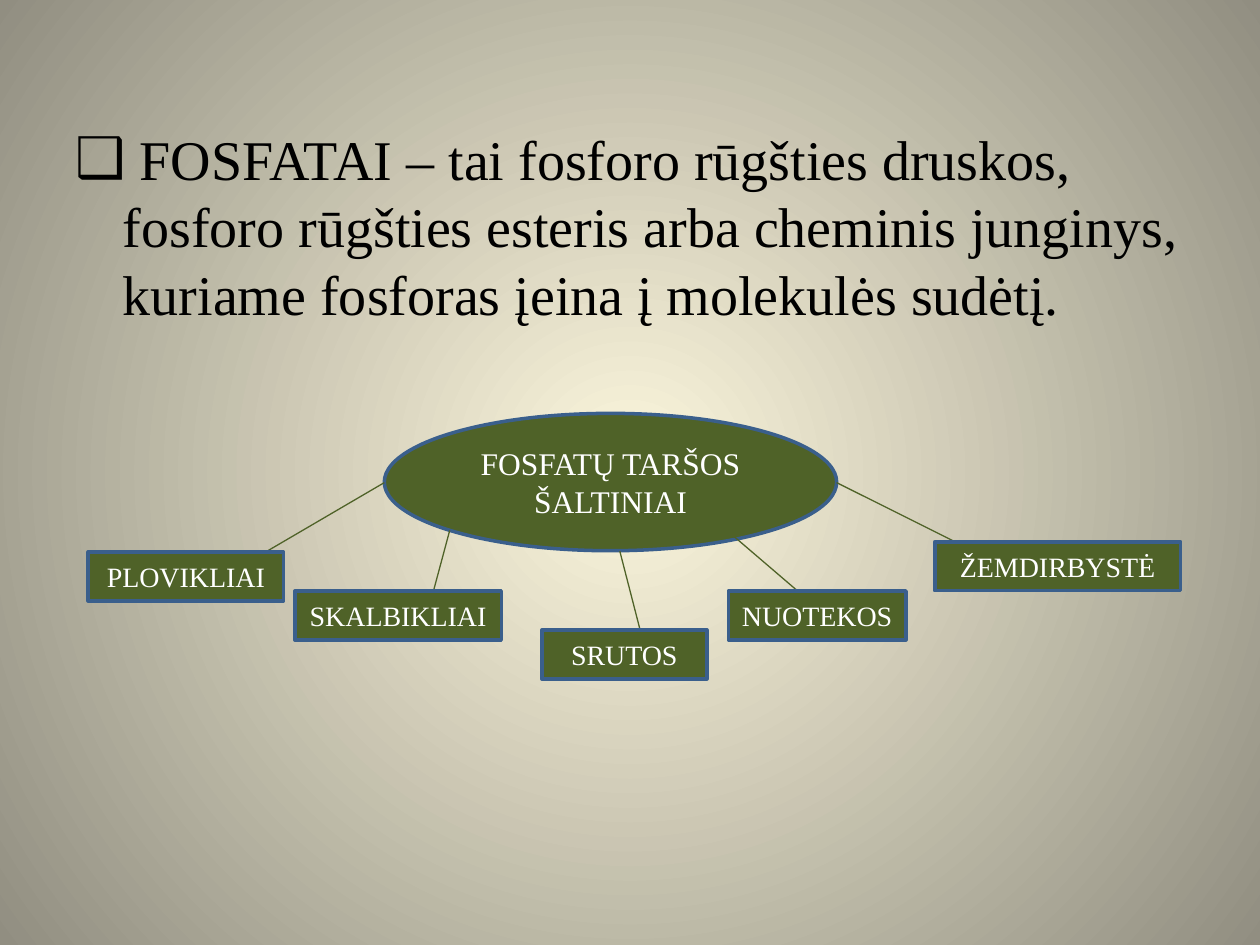
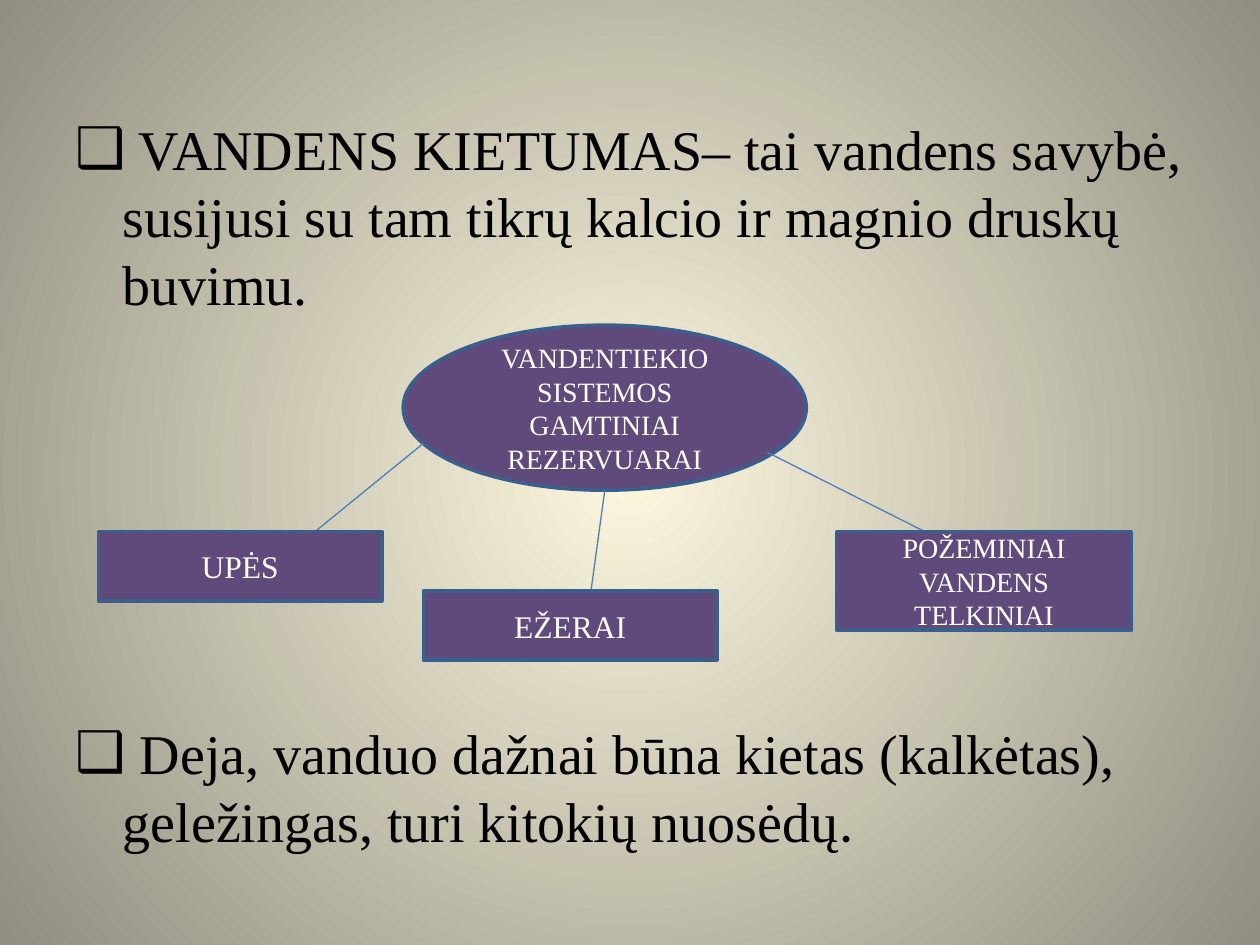
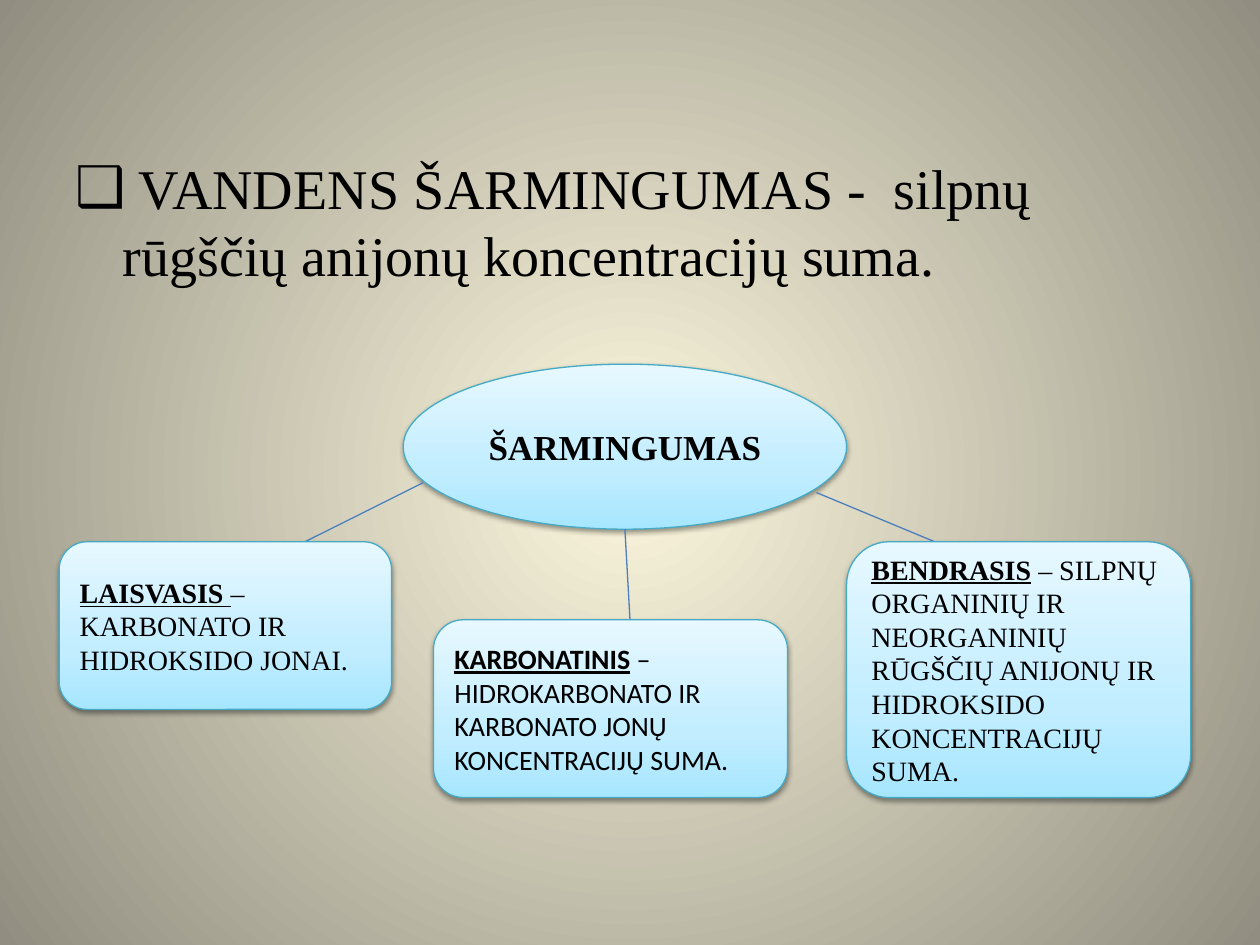
from dataclasses import dataclass

from lxml import etree
from pptx import Presentation
from pptx.dml.color import RGBColor
from pptx.enum import shapes, text
from pptx.oxml.ns import qn
from pptx.util import Pt

COLORS = {
    "glow": "FCF7DD", "edge": "918E81", "black": "000000", "white": "FFFFFF",
    "green": "4F6228", "purple": "604A7B", "outline": "3A5F8C", "link": "4B7EBC",
    "ice_low": "A7E6FF", "ice_mid": "C1EDFF", "ice_top": "E7F8FF", "ice_line": "46AAC5",
}
SERIF, SANS = "Times New Roman", "Calibri"
BACKDROP = [(0, "glow"), (100, "edge")]
ICE = [(0, "ice_low"), (35, "ice_mid"), (100, "ice_top")]
OVAL = shapes.MSO_SHAPE.OVAL


@dataclass(frozen=True)
class Style:
    """Look of one diagram; without a fill colour, shapes get the ice gradient and a shadow."""
    shape: shapes.MSO_SHAPE
    fill: str | None
    line: str
    line_width: float
    font: str
    link: str
    align: text.PP_ALIGN = text.PP_ALIGN.CENTER


@dataclass(frozen=True)
class Node:
    text: str
    left: float
    top: float
    width: float
    height: float
    size: int = 16
    lead: str = ""
    face: str = SERIF


@dataclass(frozen=True)
class Branch:
    """A box and the line from (x, y) on the hub to end_x on the box's top side."""
    node: Node
    x: float
    y: float
    end_x: float


@dataclass(frozen=True)
class Bullet:
    text: str
    space_before: float | None = None
    sans_tail: str = ""


@dataclass(frozen=True)
class Page:
    body_top: float
    bullets: list[Bullet]
    style: Style
    hub: Node
    branches: list[Branch]


RECT = shapes.MSO_SHAPE.RECTANGLE
GREEN = Style(RECT, "green", "outline", 2, "white", "green")
PURPLE = Style(RECT, "purple", "outline", 2, "white", "link")
ICY = Style(shapes.MSO_SHAPE.ROUNDED_RECTANGLE, None, "ice_line", 0.75, "black", "link",
            text.PP_ALIGN.LEFT)

PAGES = [
    Page(
        67.7,
        [Bullet(" FOSFATAI – tai fosforo rūgšties druskos, fosforo rūgšties esteris arba "
                "cheminis junginys, kuriame fosforas įeina į molekulės sudėtį.")],
        GREEN,
        Node("FOSFATŲ TARŠOS ŠALTINIAI", 219.6, 236.2, 258.5, 78.5, 18),
        [
            Branch(Node("PLOVIKLIAI", 50.4, 315.4, 111.6, 28), 219.6, 275.8, 151.9),
            Branch(Node("SKALBIKLIAI", 168.5, 337.7, 118, 28), 257, 303.1, 247.7),
            Branch(Node("SRUTOS", 309.6, 360, 94.3, 28), 354.2, 315, 365.8),
            Branch(Node("NUOTEKOS", 416.2, 337.7, 101.5, 28), 416.2, 303.8, 455.8),
            Branch(Node("ŽEMDIRBYSTĖ", 534.2, 309.6, 140.4, 28), 478.1, 275.8, 545.8),
        ],
    ),
    Page(
        61.9,
        [Bullet(" VANDENS KIETUMAS– tai vandens savybė, susijusi su tam tikrų kalcio ir "
                "magnio druskų buvimu."),
         Bullet(" Deja, vanduo dažnai būna kietas (kalkėtas), geležingas, turi kitokių "
                "nuosėdų", 230, ".")],
        PURPLE,
        Node("VANDENTIEKIO SISTEMOS GAMTINIAI REZERVUARAI", 230.4, 185.8, 230.4, 94.3),
        [
            Branch(Node("UPĖS", 56.2, 303.8, 162, 39.6, 18), 241.9, 253.4, 180),
            Branch(Node("EŽERAI", 241.9, 337.7, 167.8, 39.6, 18), 345.6, 280.1, 337.7),
            Branch(Node("POŽEMINIAI VANDENS TELKINIAI", 478.1, 303.8, 168.5, 56.2),
                   438.5, 258.5, 528.5),
        ],
    ),
    Page(
        84.2,
        [Bullet(" VANDENS ŠARMINGUMAS -  silpnų rūgščių anijonų koncentracijų suma.")],
        ICY,
        Node("", 230.4, 208.1, 253.4, 94.3, 20, lead="ŠARMINGUMAS"),
        [
            Branch(Node("– KARBONATO IR HIDROKSIDO JONAI.", 33.8, 309.6, 190, 95.8,
                        lead="LAISVASIS "), 241.9, 275.8, 174.2),
            Branch(Node(" – HIDROKARBONATO IR KARBONATO JONŲ KONCENTRACIJŲ SUMA.",
                        247.7, 354.2, 202.3, 101.5, lead="KARBONATINIS", face=SANS),
                   357.1, 302.4, 360),
            Branch(Node(" – SILPNŲ ORGANINIŲ IR NEORGANINIŲ RŪGŠČIŲ ANIJONŲ IR HIDROKSIDO "
                        "KONCENTRACIJŲ SUMA.", 483.8, 309.6, 196.6, 146.2,
                        lead="BENDRASIS"), 466.6, 281.5, 534.2),
        ],
    ),
]


def rgb(name: str) -> RGBColor:
    return RGBColor.from_string(COLORS[name])


def add_color(parent, name: str):
    return etree.SubElement(parent, qn("a:srgbClr"), val=COLORS[name])


def set_stops(grad, stops: list[tuple[int, str]]) -> None:
    gs_list = grad.find(qn("a:gsLst"))
    for gs in list(gs_list):
        gs_list.remove(gs)
    for pos, name in stops:
        add_color(etree.SubElement(gs_list, qn("a:gs"), pos=str(pos * 1000)), name)


def set_background(s) -> None:
    """Fill the slide with a gradient that radiates from its centre."""
    s.background.fill.gradient()
    grad = next(s.element.iter(qn("a:gradFill")))
    set_stops(grad, BACKDROP)
    grad.remove(grad.find(qn("a:lin")))
    circle = etree.SubElement(grad, qn("a:path"), path="circle")
    etree.SubElement(circle, qn("a:fillToRect"), {side: "50000" for side in "ltrb"})


def style_font(font, face: str, size: int, color: str) -> None:
    font.name, font.size = face, Pt(size)
    font.color.rgb = rgb(color)


def fill_body(s, page: Page) -> None:
    body = s.placeholders[1]
    body.left, body.top = Pt(36), Pt(page.body_top)
    body.width, body.height = Pt(648), Pt(482.4 - page.body_top)
    tf = body.text_frame
    tf.auto_size = text.MSO_AUTO_SIZE.NONE
    for i, bullet in enumerate(page.bullets):
        p = tf.add_paragraph() if i else tf.paragraphs[0]
        p.add_run().text = bullet.text
        style_font(p.font, SERIF, 32, "black")
        if bullet.space_before:
            p.space_before = Pt(bullet.space_before)
        if bullet.sans_tail:
            r = p.add_run()
            r.text, r.font.name = bullet.sans_tail, SANS
        pPr = p._p.get_or_add_pPr()
        mark = etree.Element(qn("a:buChar"), char="❑")
        pPr.insert_element_before(mark, "a:tabLst", "a:defRPr", "a:extLst")


def add_ice_fill(sp) -> None:
    sp.fill.gradient()
    sp.fill.gradient_angle = 90
    set_stops(next(sp.element.iter(qn("a:gradFill"))), ICE)
    shadow = etree.SubElement(
        next(sp.element.iter(qn("a:effectLst"))), qn("a:outerShdw"),
        blurRad=str(Pt(3.1)), dist=str(Pt(1.6)), dir="5400000", rotWithShape="0")
    etree.SubElement(add_color(shadow, "black"), qn("a:alpha"), val="38000")


def add_node(s, node: Node, style: Style, shape: shapes.MSO_SHAPE,
             align: text.PP_ALIGN) -> None:
    sp = s.shapes.add_shape(shape, Pt(node.left), Pt(node.top), Pt(node.width), Pt(node.height))
    sp.shadow.inherit = False
    sp.line.color.rgb, sp.line.width = rgb(style.line), Pt(style.line_width)
    if style.fill:
        sp.fill.solid()
        sp.fill.fore_color.rgb = rgb(style.fill)
    else:
        add_ice_fill(sp)
    tf = sp.text_frame
    tf.vertical_anchor = text.MSO_ANCHOR.MIDDLE
    p = tf.paragraphs[0]
    p.alignment = align
    style_font(p.font, node.face, node.size, style.font)
    if node.lead:
        r = p.add_run()
        r.text, r.font.bold = node.lead, True
        if node.text:
            r.font.underline = True
    if node.text:
        p.add_run().text = node.text


def add_link(s, branch: Branch, color: str) -> None:
    line = s.shapes.add_connector(shapes.MSO_CONNECTOR.STRAIGHT, Pt(branch.x), Pt(branch.y),
                                  Pt(branch.end_x), Pt(branch.node.top))
    line.line.color.rgb, line.line.width = rgb(color), Pt(0.75)
    etree.SubElement(line.element.spPr, qn("a:effectLst"))


def add_page(prs, page: Page) -> None:
    s = prs.slides.add_slide(prs.slide_layouts.get_by_name("Title and Content"))
    title = s.shapes.title.element
    title.getparent().remove(title)
    set_background(s)
    fill_body(s, page)
    add_node(s, page.hub, page.style, OVAL, text.PP_ALIGN.CENTER)
    for branch in page.branches:
        add_link(s, branch, page.style.link)
    for branch in page.branches:
        add_node(s, branch.node, page.style, page.style.shape, page.style.align)


def main() -> None:
    prs = Presentation()
    prs.slide_width, prs.slide_height = Pt(720), Pt(540)
    for page in PAGES:
        add_page(prs, page)
    prs.save("out.pptx")


if __name__ == "__main__":
    main()
